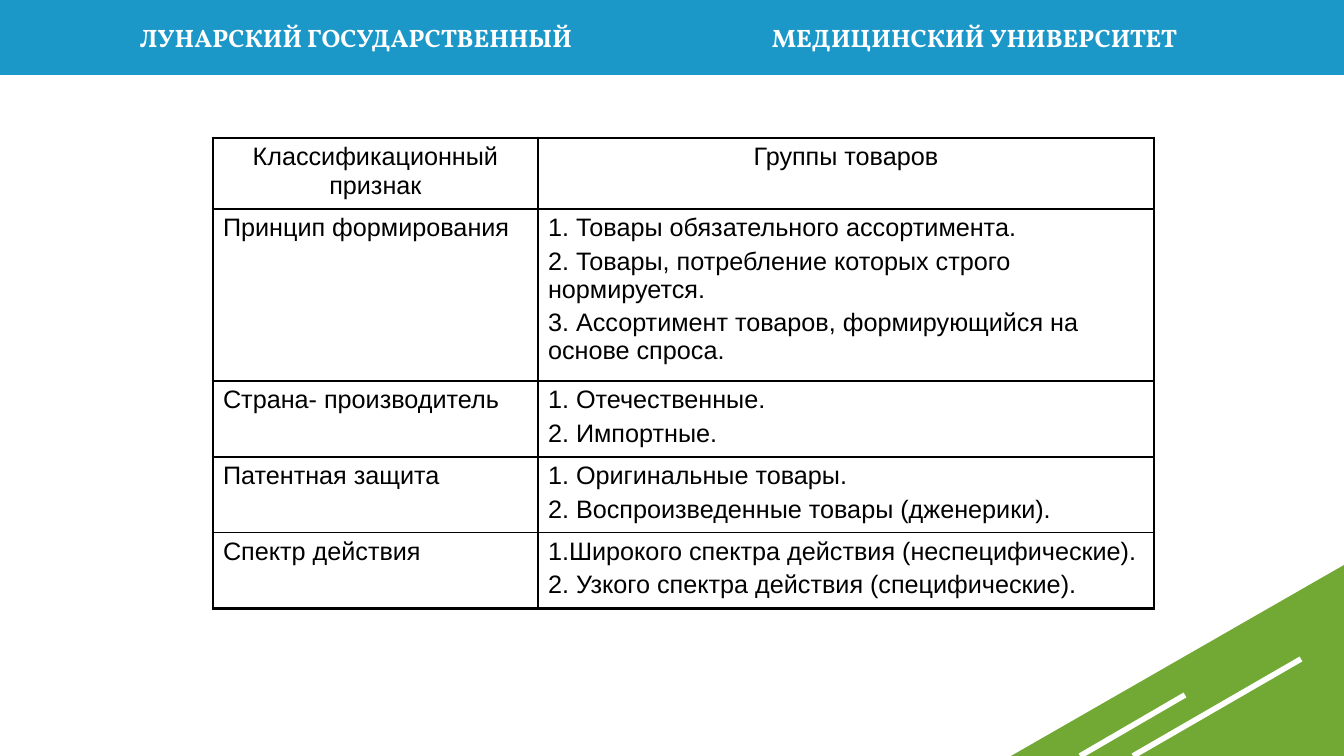
import dataclasses
import typing

import pptx
import pptx.dml.color
import pptx.enum.shapes
import pptx.enum.text
import pptx.oxml
import pptx.oxml.ns
import pptx.util

ALIGN = pptx.enum.text.PP_ALIGN
PRESET = pptx.enum.shapes.MSO_SHAPE
PIXELS_PER_INCH = 100.8


@dataclasses.dataclass(frozen=True)
class Theme:
    bar: str = "1B97C8"
    corner: str = "71A934"
    light: str = "FFFFFF"
    ink: str = "000000"
    header_font: str = "Vollkorn"
    table_font: str = "Arial"
    text_size: float = 18
    paragraph_gap: float = 3.6
    stripe_width: float = 4
    frame_width: float = 2.25
    grid_width: float = 1


class Block(typing.NamedTuple):
    preset: PRESET
    left: int
    top: int
    width: int
    height: int
    color: str
    mirrored: bool = False


class Stripe(typing.NamedTuple):
    start_x: int
    start_y: int
    end_x: int
    end_y: int


class Heading(typing.NamedTuple):
    text: str
    left: int
    alignment: ALIGN


class Row(typing.NamedTuple):
    height: int
    feature: str
    groups: tuple[str, ...]


THEME = Theme()
SLIDE_WIDTH, SLIDE_HEIGHT = 1344, 756
BLOCKS = (
    Block(PRESET.RECTANGLE, 0, 0, SLIDE_WIDTH, 75, THEME.bar),
    Block(PRESET.RIGHT_TRIANGLE, 1011, 565, 333, 191, THEME.corner, mirrored=True),
)
STRIPES = (Stripe(1080, 756, 1185, 695), Stripe(1133, 756, 1301, 659))
HEADING_TOP, HEADING_WIDTH, HEADING_HEIGHT = 17, 490, 40
HEADINGS = (
    Heading("ЛУНАРСКИЙ ГОСУДАРСТВЕННЫЙ", 92, ALIGN.RIGHT),
    Heading("МЕДИЦИНСКИЙ УНИВЕРСИТЕТ", 762, ALIGN.LEFT),
)
TABLE_LEFT, TABLE_TOP = 213, 138
COLUMN_WIDTHS = (325, 616)
ROWS = (
    Row(71, "Классификационный признак", ("Группы товаров",)),
    Row(172, "Принцип формирования", (
        "1. Товары обязательного ассортимента.",
        "2. Товары, потребление которых строго нормируется.",
        "3. Ассортимент товаров, формирующийся на основе спроса.",
    )),
    Row(76, "Страна- производитель", ("1. Отечественные.", "2. Импортные.")),
    Row(75, "Патентная защита", (
        "1. Оригинальные товары.",
        "2. Воспроизведенные товары (дженерики).",
    )),
    Row(75, "Спектр действия", (
        "1.Широкого спектра действия (неспецифические).",
        "2. Узкого спектра действия (специфические).",
    )),
)


def px(length: int) -> pptx.util.Emu:
    return pptx.util.Inches(length / PIXELS_PER_INCH)


def rgb(color: str) -> pptx.dml.color.RGBColor:
    return pptx.dml.color.RGBColor.from_string(color)


def apply_format(target: object, values: dict[str, object]) -> None:
    for name, value in values.items():
        setattr(target, name, value)


def write_paragraphs(frame, lines: tuple[str, ...], font_values: dict[str, object],
                     color: str, paragraph_values: dict[str, object]) -> None:
    for index, line in enumerate(lines):
        paragraph = frame.add_paragraph() if index else frame.paragraphs[0]
        apply_format(paragraph, paragraph_values)
        run = paragraph.add_run()
        run.text = line
        apply_format(run.font, {"size": pptx.util.Pt(THEME.text_size), **font_values})
        run.font.color.rgb = rgb(color)


def draw_block(slide, block: Block) -> None:
    shape = slide.shapes.add_shape(
        block.preset, px(block.left), px(block.top), px(block.width), px(block.height))
    shape.shadow.inherit = False
    shape.fill.solid()
    shape.fill.fore_color.rgb = rgb(block.color)
    shape.line.fill.background()
    if block.mirrored:
        shape.element.spPr.xfrm.set("flipH", "1")


def draw_stripe(slide, stripe: Stripe) -> None:
    connector = slide.shapes.add_connector(
        pptx.enum.shapes.MSO_CONNECTOR.STRAIGHT, *map(px, stripe))
    connector.line.color.rgb = rgb(THEME.light)
    connector.line.width = pptx.util.Pt(THEME.stripe_width)
    properties = connector.element.spPr
    properties.append(properties.makeelement(pptx.oxml.ns.qn("a:effectLst"), {}))


def draw_heading(slide, heading: Heading) -> None:
    box = slide.shapes.add_textbox(
        px(heading.left), px(HEADING_TOP), px(HEADING_WIDTH), px(HEADING_HEIGHT))
    box.text_frame.word_wrap = True
    write_paragraphs(box.text_frame, (heading.text,),
                     {"name": THEME.header_font, "bold": True},
                     THEME.light, {"alignment": heading.alignment})


def set_borders(cell, widths: dict[str, float]) -> None:
    """Put border lines, keyed by side letter in L, R, T, B order, before the fill."""
    properties = cell._tc.get_or_add_tcPr()
    for index, (side, width) in enumerate(widths.items()):
        properties.insert(index, pptx.oxml.parse_xml(
            f'<a:ln{side} {pptx.oxml.ns.nsdecls("a")} w="{pptx.util.Pt(width)}">'
            f'<a:solidFill><a:srgbClr val="{THEME.ink}"/></a:solidFill></a:ln{side}>'))


def draw_table(slide) -> None:
    table = slide.shapes.add_table(
        len(ROWS), len(COLUMN_WIDTHS), px(TABLE_LEFT), px(TABLE_TOP),
        px(sum(COLUMN_WIDTHS)), px(sum(row.height for row in ROWS))).table
    apply_format(table, {"first_row": False, "horz_banding": False})
    for column, width in zip(table.columns, COLUMN_WIDTHS):
        column.width = px(width)
    last_row, last_column = len(ROWS) - 1, len(COLUMN_WIDTHS) - 1
    for row_index, row in enumerate(ROWS):
        table.rows[row_index].height = px(row.height)
        alignment = ALIGN.LEFT if row_index else ALIGN.CENTER
        for column_index, lines in enumerate(((row.feature,), row.groups)):
            cell = table.cell(row_index, column_index)
            cell.fill.background()
            write_paragraphs(cell.text_frame, lines, {"name": THEME.table_font}, THEME.ink, {
                "alignment": alignment,
                "space_before": pptx.util.Pt(THEME.paragraph_gap),
            })
            on_frame = {
                "L": column_index == 0,
                "R": column_index == last_column,
                "T": row_index == 0,
                "B": row_index == last_row,
            }
            set_borders(cell, {side: THEME.frame_width if outer else THEME.grid_width
                               for side, outer in on_frame.items()})


def main() -> None:
    presentation = pptx.Presentation()
    apply_format(presentation, {
        "slide_width": px(SLIDE_WIDTH), "slide_height": px(SLIDE_HEIGHT)})
    slide = presentation.slides.add_slide(presentation.slide_layouts.get_by_name("Blank"))
    for block in BLOCKS:
        draw_block(slide, block)
    for stripe in STRIPES:
        draw_stripe(slide, stripe)
    for heading in HEADINGS:
        draw_heading(slide, heading)
    draw_table(slide)
    presentation.save("out.pptx")


if __name__ == "__main__":
    main()
